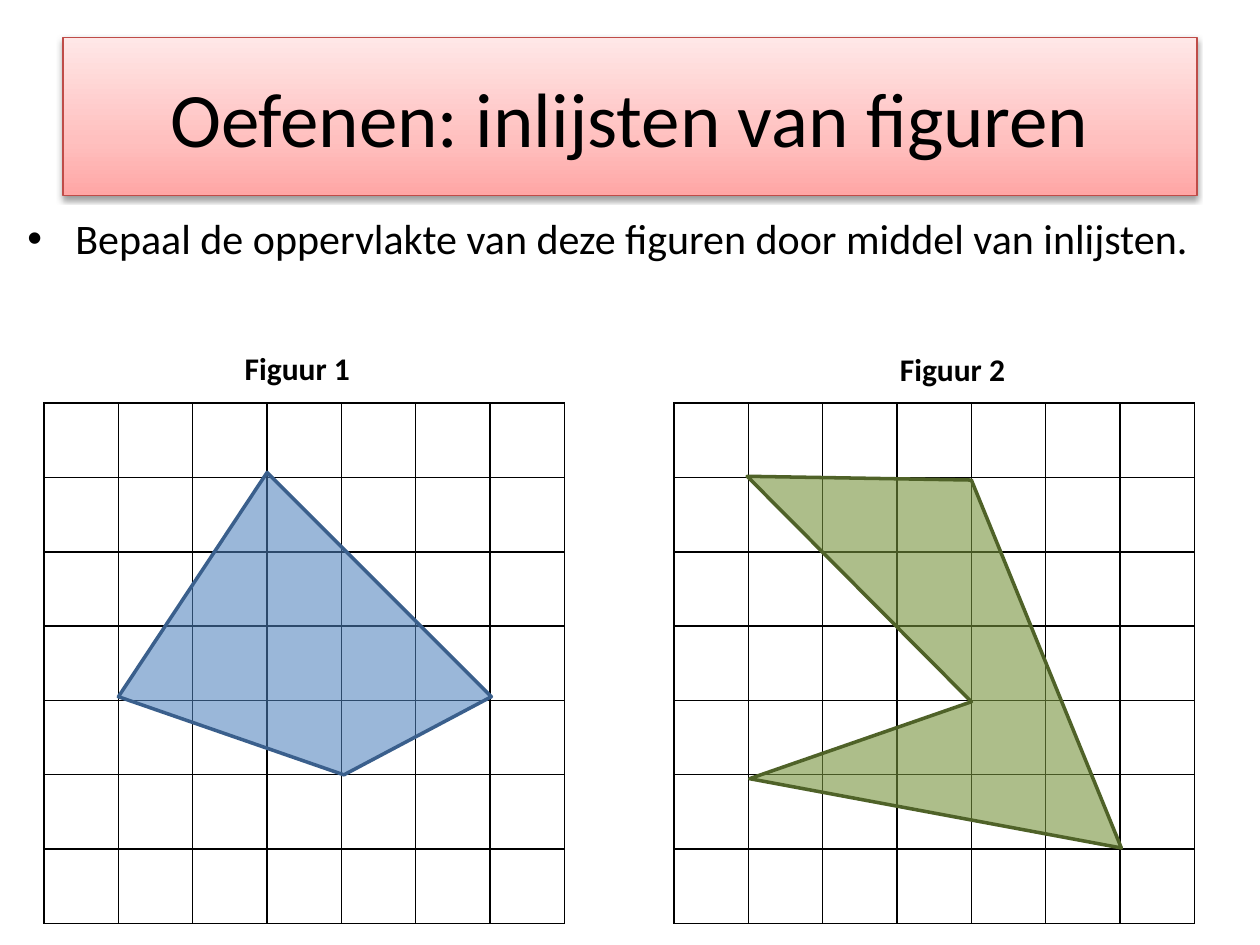
from copy import deepcopy
from dataclasses import dataclass

from lxml.etree import SubElement
from pptx import Presentation
from pptx.dml.color import RGBColor
from pptx.enum.shapes import MSO_SHAPE
from pptx.enum.text import MSO_ANCHOR as Anchor, PP_ALIGN as Align
from pptx.oxml.ns import qn
from pptx.util import Inches, Pt


@dataclass(frozen=True)
class Theme:
    font: str = "Calibri"
    title_size: int = 44
    body_size: int = 24
    label_size: int = 18
    black: str = "000000"
    title_line: str = "BF4C48"
    title_stops: tuple = ((0, "FFA6A5"), (0.35, "FFC0BF"), (1, "FFE7E7"))


THEME = Theme()
GRID_COUNT = 7
GRID_TOP = 3.2
GRID_SIZE = 4.13


def rgb(value):
    return RGBColor.from_string(value)


def add_run(paragraph, text, size, bold=False):
    run = paragraph.add_run()
    run.text = text
    run.font.name = THEME.font
    run.font.size = Pt(size)
    run.font.bold = bold
    run.font.color.rgb = rgb(THEME.black)


def style_line(line, color, width):
    line.color.rgb = rgb(color)
    line.width = Pt(width)


def set_gradient(fill, shape):
    """Fill from bottom to top with the three title colours."""
    fill.gradient()
    fill.gradient_angle = 90
    first_stop = shape.element.spPr.find(".//" + qn("a:gs"))
    first_stop.addnext(deepcopy(first_stop))
    for stop, (position, color) in zip(fill.gradient_stops, THEME.title_stops):
        stop.position = position
        stop.color.rgb = rgb(color)


def add_shadow(shape):
    shape.shadow.inherit = False
    effects = shape.element.spPr.find(qn("a:effectLst"))
    shadow = SubElement(effects, qn("a:outerShdw"), blurRad=str(Pt(3.1)),
                        dist=str(Pt(1.6)), dir="5400000", rotWithShape="0")
    color = SubElement(shadow, qn("a:srgbClr"), val=THEME.black)
    SubElement(color, qn("a:alpha"), val="38000")


def add_title(slide, text):
    shape = slide.shapes.add_shape(MSO_SHAPE.RECTANGLE, Inches(0.5), Inches(0.3),
                                   Inches(9), Inches(1.25))
    set_gradient(shape.fill, shape)
    style_line(shape.line, THEME.title_line, 0.75)
    add_shadow(shape)
    shape.text_frame.word_wrap = True
    shape.text_frame.vertical_anchor = Anchor.MIDDLE
    paragraph = shape.text_frame.paragraphs[0]
    paragraph.alignment = Align.CENTER
    add_run(paragraph, text, THEME.title_size)


def add_text_box(slide, left, top, width, height):
    """Add a wrapping text box and return its first paragraph."""
    box = slide.shapes.add_textbox(Inches(left), Inches(top),
                                   Inches(width), Inches(height))
    box.text_frame.word_wrap = True
    return box.text_frame.paragraphs[0]


def add_bullet(slide, text):
    paragraph = add_text_box(slide, 0.12, 1.64, 9.5, 4.95)
    paragraph.space_before = Pt(0.2 * THEME.body_size)
    properties = paragraph._p.get_or_add_pPr()
    properties.set("marL", str(Inches(0.38)))
    properties.set("indent", str(-Inches(0.38)))
    SubElement(properties, qn("a:buFont"), typeface="Arial")
    SubElement(properties, qn("a:buChar"), char="•")
    add_run(paragraph, text, THEME.body_size)


def add_label(slide, left, top, text):
    paragraph = add_text_box(slide, left, top, 2.76, 0.4)
    paragraph.alignment = Align.CENTER
    add_run(paragraph, text, THEME.label_size, bold=True)


def set_borders(cell):
    properties = cell._tc.get_or_add_tcPr()
    for side in ("a:lnL", "a:lnR", "a:lnT", "a:lnB"):
        border = SubElement(properties, qn(side), w=str(Pt(1)))
        fill = SubElement(border, qn("a:solidFill"))
        SubElement(fill, qn("a:srgbClr"), val=THEME.black)


def add_grid(slide, left):
    size = Inches(GRID_SIZE)
    table = slide.shapes.add_table(GRID_COUNT, GRID_COUNT, Inches(left),
                                   Inches(GRID_TOP), size, size).table
    table.first_row = table.horz_banding = False
    for cell in table.iter_cells():
        set_borders(cell)
        cell.fill.background()


def add_polygon(slide, points, fill_color, opacity, line_color):
    start, *others = [(Inches(x), Inches(y)) for x, y in points]
    builder = slide.shapes.build_freeform(*start)
    builder.add_line_segments(others, close=True)
    shape = builder.convert_to_shape()
    shape.shadow.inherit = False
    shape.fill.solid()
    shape.fill.fore_color.rgb = rgb(fill_color)
    color = shape.element.spPr.find(qn("a:solidFill")).find(qn("a:srgbClr"))
    SubElement(color, qn("a:alpha"), val=str(opacity * 1000))
    style_line(shape.line, line_color, 2)


def main():
    presentation = Presentation()
    presentation.slide_width = Inches(10)
    presentation.slide_height = Inches(7.5)
    slide = presentation.slides.add_slide(presentation.slide_layouts[6])

    add_title(slide, "Oefenen: inlijsten van figuren")
    add_bullet(slide, "Bepaal de oppervlakte van deze figuren door middel van inlijsten.")

    add_grid(slide, 0.35)
    quadrilateral = [(0.94, 5.53), (2.12, 3.75), (3.9, 5.53), (2.73, 6.15)]
    add_polygon(slide, quadrilateral, "4F81BD", 57, "3A5F8C")

    add_grid(slide, 5.35)
    pentagon = [(5.93, 3.78), (7.71, 5.57), (5.95, 6.18), (8.9, 6.73), (7.71, 3.81)]
    add_polygon(slide, pentagon, "77933C", 60, "4F6228")

    add_label(slide, 0.98, 2.72, "Figuur 1")
    add_label(slide, 6.18, 2.73, "Figuur 2")

    presentation.save("out.pptx")


if __name__ == "__main__":
    main()
